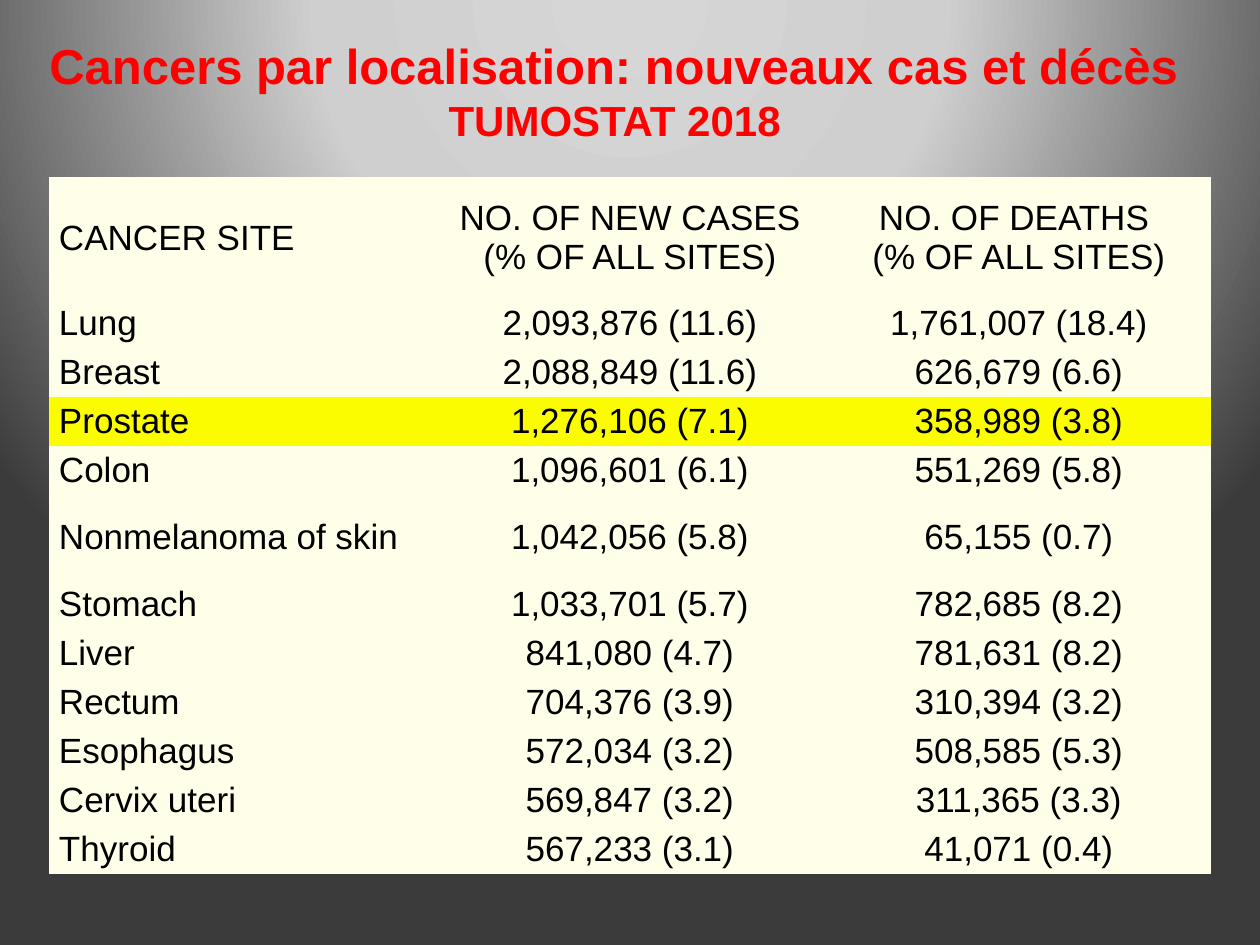
import pptx
import pptx.util
import pptx.oxml
import pptx.oxml.ns
from pptx.dml.color import RGBColor
from pptx.enum.text import MSO_ANCHOR, MSO_AUTO_SIZE, PP_ALIGN

PX = 914400 / 126
FONT = "Arial"
RED = RGBColor(0xFF, 0x00, 0x00)
BLACK = RGBColor(0x00, 0x00, 0x00)
CREAM = RGBColor(0xFF, 0xFF, 0xE9)
YELLOW = RGBColor(0xFC, 0xFC, 0x00)
BACKGROUND_STOPS = [
    (0, RGBColor(0xD6, 0xD6, 0xD6)),
    (40, RGBColor(0xCF, 0xCF, 0xCF)),
    (100, RGBColor(0x3B, 0x3B, 0x3B)),
]

COLUMN_WIDTHS = [384, 394, 384]
HEADER_HEIGHT, ROW_HEIGHT, TALL_HEIGHT = 122, 49, 85
HIGHLIGHTED_SITE = "Prostate"
TALL_SITE = "Nonmelanoma of skin"
HEADER = ("CANCER SITE", "NO. OF NEW CASES (% OF ALL SITES)",
          "NO. OF DEATHS \n(% OF ALL SITES)")
SITES = [
    ("Lung", "2,093,876 (11.6)", "1,761,007 (18.4)"),
    ("Breast", "2,088,849 (11.6)", "626,679 (6.6)"),
    ("Prostate", "1,276,106 (7.1)", "358,989 (3.8)"),
    ("Colon", "1,096,601 (6.1)", "551,269 (5.8)"),
    ("Nonmelanoma of skin", "1,042,056 (5.8)", "65,155 (0.7)"),
    ("Stomach", "1,033,701 (5.7)", "782,685 (8.2)"),
    ("Liver", "841,080 (4.7)", "781,631 (8.2)"),
    ("Rectum", "704,376 (3.9)", "310,394 (3.2)"),
    ("Esophagus", "572,034 (3.2)", "508,585 (5.3)"),
    ("Cervix uteri", "569,847 (3.2)", "311,365 (3.3)"),
    ("Thyroid", "567,233 (3.1)", "41,071 (0.4)"),
]


def px(length):
    return pptx.util.Emu(round(length * PX))


def add_span(para, text, size, color, bold=False):
    span = para.add_run()
    span.text = text
    span.font.name = FONT
    span.font.size = pptx.util.Pt(size)
    span.font.bold = bold
    span.font.color.rgb = color


def paint_background(page):
    """Circular gradient centred above the top edge."""
    page.background.fill.solid()
    properties = page.element.find(".//" + pptx.oxml.ns.qn("p:bgPr"))
    stops = "".join(
        f'<a:gs pos="{position * 1000}"><a:srgbClr val="{color}"/></a:gs>'
        for position, color in BACKGROUND_STOPS)
    gradient = pptx.oxml.parse_xml(
        f'<a:gradFill {pptx.oxml.ns.nsdecls("a")} rotWithShape="1">'
        f'<a:gsLst>{stops}</a:gsLst><a:path path="circle">'
        '<a:fillToRect l="50000" t="-80000" r="50000" b="180000"/>'
        '</a:path></a:gradFill>')
    properties.replace(properties[0], gradient)


def format_title(page):
    title = page.shapes.title
    title.left, title.top, title.width, title.height = map(px, (20, 28, 1201, 123))
    frame = title.text_frame
    frame.word_wrap = True
    frame.auto_size = MSO_AUTO_SIZE.NONE
    frame.vertical_anchor = MSO_ANCHOR.BOTTOM
    para = frame.paragraphs[0]
    para.alignment = PP_ALIGN.CENTER
    add_span(para, "Cancers par localisation: nouveaux cas et décès ", 28, RED, True)
    para.add_line_break()
    add_span(para, "TUMOSTAT 2018 ", 24, RED, True)


def clear_borders(cell):
    """Border elements come before the fill in the cell properties."""
    properties = cell._tc.get_or_add_tcPr()
    for index, side in enumerate(("lnL", "lnR", "lnT", "lnB")):
        properties.insert(index, pptx.oxml.parse_xml(
            f'<a:{side} {pptx.oxml.ns.nsdecls("a")} w="0"><a:noFill/></a:{side}>'))


def fill_cell(cell, text, alignment, color):
    cell.fill.solid()
    cell.fill.fore_color.rgb = color
    clear_borders(cell)
    cell.vertical_anchor = MSO_ANCHOR.MIDDLE
    cell.margin_left = cell.margin_right = px(10)
    cell.margin_top = cell.margin_bottom = px(4)
    frame = cell.text_frame
    for index, line in enumerate(text.split("\n")):
        para = frame.add_paragraph() if index else frame.paragraphs[0]
        para.alignment = alignment
        add_span(para, line, 20, BLACK)


def add_site_table(page):
    rows = [HEADER] + SITES
    heights = [HEADER_HEIGHT] + [
        TALL_HEIGHT if site[0] == TALL_SITE else ROW_HEIGHT for site in SITES]
    table = page.shapes.add_table(
        len(rows), len(COLUMN_WIDTHS), px(49), px(177),
        px(sum(COLUMN_WIDTHS)), px(sum(heights))).table
    table.first_row = table.horz_banding = False
    for column, width in zip(table.columns, COLUMN_WIDTHS):
        column.width = px(width)
    for row, height, texts in zip(table.rows, heights, rows):
        row.height = px(height)
        color = YELLOW if texts[0] == HIGHLIGHTED_SITE else CREAM
        for index, text in enumerate(texts):
            alignment = PP_ALIGN.CENTER if index else PP_ALIGN.LEFT
            fill_cell(row.cells[index], text, alignment, color)


def main():
    deck = pptx.Presentation()
    deck.slide_width, deck.slide_height = px(1260), px(945)
    page = deck.slides.add_slide(deck.slide_layouts[5])
    paint_background(page)
    add_site_table(page)
    format_title(page)
    deck.save("out.pptx")


if __name__ == "__main__":
    main()
